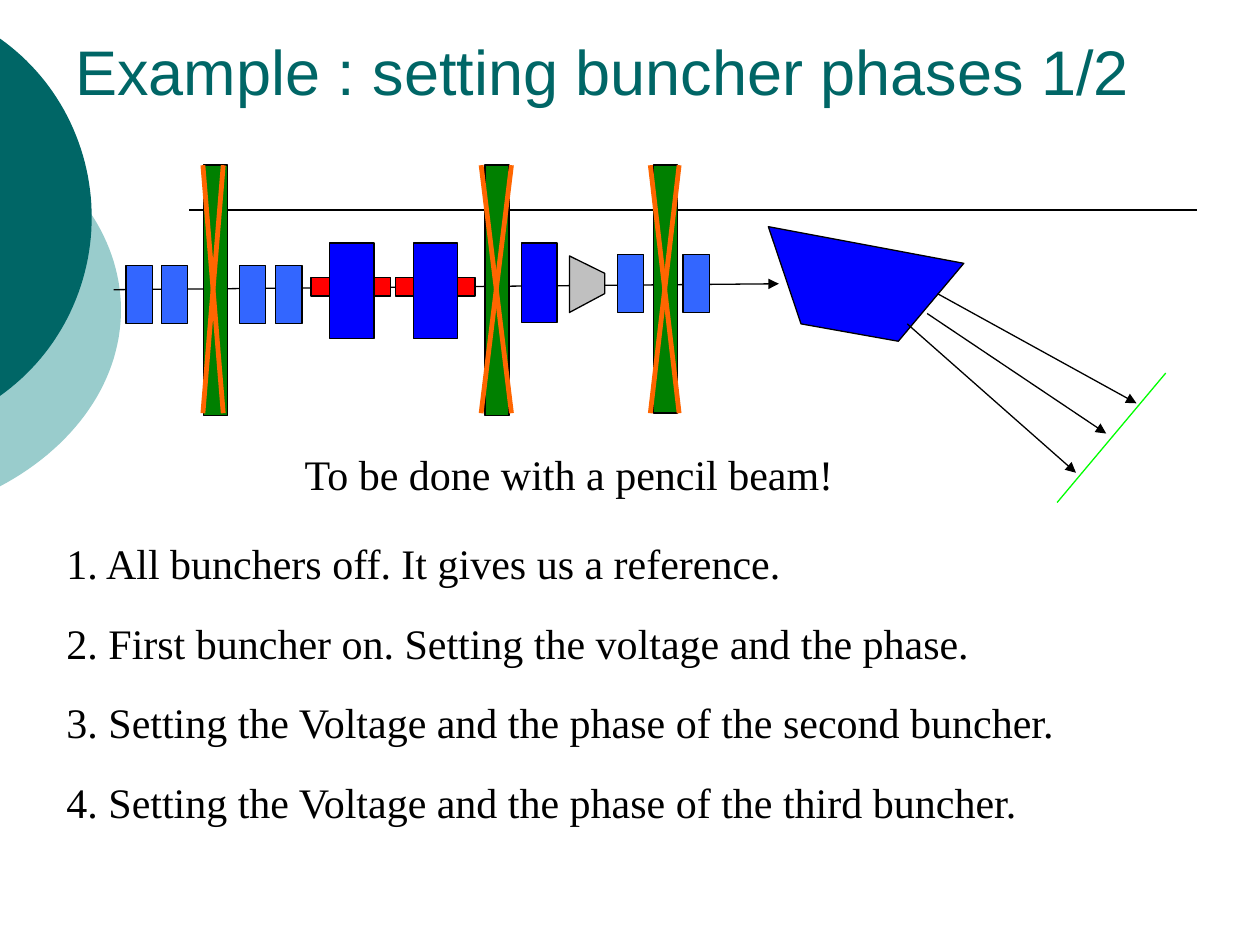
import math
from dataclasses import dataclass

import lxml.etree
import pptx
import pptx.dml.color
import pptx.enum.shapes
import pptx.enum.text
import pptx.oxml.ns
import pptx.util

Cm = pptx.util.Cm
Point = tuple[float, float]


@dataclass(frozen=True)
class Theme:
    teal: str = "006666"
    mist: str = "99CCCC"
    black: str = "000000"
    red: str = "FF0000"
    sky: str = "3366FF"
    blue: str = "0000FF"
    green: str = "008000"
    grey: str = "C0C0C0"
    lime: str = "00FF00"
    orange: str = "FF6600"
    sans: str = "Arial"
    serif: str = "Times New Roman"
    head: float = 36
    body: float = 24
    thin: float = 0.75
    rule: float = 1
    bold: float = 2.75


@dataclass(frozen=True)
class Group:
    """Equal boxes that share a top edge; lengths in cm."""
    lefts: tuple[float, ...]
    top: float
    width: float
    height: float
    color: str


@dataclass(frozen=True)
class Cross:
    """Strike-out over a buncher, in cm."""
    left: float
    right: float


T = Theme()
TOP, BASE = 3.33, 8.33

GROUPS = (
    Group((6.27, 7.98), 5.59, 1.6, 0.38, T.red),
    Group((2.54, 3.25, 4.83, 5.56), 5.36, 0.53, 1.17, T.sky),
    Group((12.45, 13.77), 5.13, 0.53, 1.17, T.sky),
    Group((4.11, 9.78), TOP, 0.48, 5.05, T.green),
    Group((13.18,), TOP, 0.48, 5, T.green),
    Group((6.65, 8.33), 4.9, 0.89, 1.93, T.blue),
    Group((10.52,), 4.9, 0.71, 1.6, T.blue),
)
CROSSES = (Cross(4.09, 4.5), Cross(13.11, 13.69), Cross(9.7, 10.31))
CONE = [(11.48, 6.3), (12.19, 5.92), (12.19, 5.51), (11.48, 5.16)]
MAGNET = [(15.49, 4.57), (16.15, 6.53), (18.11, 6.88), (19.43, 5.31)]
RAYS = (
    ((18.69, 6.32), (22.3, 8.74)),
    ((18.29, 6.53), (21.69, 9.53)),
    ((18.9, 5.92), (22.91, 8.13)),
)
STEPS = (
    "1. All bunchers off. It gives us a reference.",
    "2. First buncher on. Setting the voltage and the phase.",
    "3. Setting the Voltage and the phase of the second buncher.",
    "4. Setting the Voltage and the phase of the third buncher.",
)


def rgb(color: str) -> pptx.dml.color.RGBColor:
    return pptx.dml.color.RGBColor.from_string(color)


def paint(shape, color: str, edge: bool = True) -> None:
    shape.shadow.inherit = False
    shape.fill.solid()
    shape.fill.fore_color.rgb = rgb(color)
    if edge:
        shape.line.color.rgb = rgb(T.black)
        shape.line.width = pptx.util.Pt(T.thin)
    else:
        shape.line.fill.background()


def draw_group(slide, group: Group) -> None:
    for left in group.lefts:
        box = slide.shapes.add_shape(
            pptx.enum.shapes.MSO_SHAPE.RECTANGLE, Cm(left), Cm(group.top),
            Cm(group.width), Cm(group.height))
        paint(box, group.color)


def draw_shape(slide, points: list[Point], color: str,
               edge: bool = True) -> None:
    first, *rest = [(Cm(x), Cm(y)) for x, y in points]
    form = slide.shapes.build_freeform(*first)
    form.add_line_segments(rest, close=True)
    paint(form.convert_to_shape(), color, edge)


def draw_disc(slide, mid: Point, radii: Point, color: str) -> None:
    """Draw the part of an ellipse that lies right of the slide's left edge."""
    span, count = math.acos(-mid[0] / radii[0]), 60
    turns = [span * (2 * i / count - 1) for i in range(count + 1)]
    arc = [(max(0, mid[0] + radii[0] * math.cos(a)),
            mid[1] + radii[1] * math.sin(a)) for a in turns]
    draw_shape(slide, arc, color, edge=False)


def draw_line(slide, start: Point, end: Point, color: str = T.black,
              width: float = T.thin, arrow: bool = False) -> None:
    line = slide.shapes.add_connector(
        pptx.enum.shapes.MSO_CONNECTOR.STRAIGHT,
        *(Cm(v) for v in (*start, *end)))
    line.line.color.rgb = rgb(color)
    line.line.width = pptx.util.Pt(width)
    qn = pptx.oxml.ns.qn
    if arrow:
        lxml.etree.SubElement(line.line._get_or_add_ln(), qn("a:tailEnd"),
                              type="triangle")
    lxml.etree.SubElement(line._element.spPr, qn("a:effectLst"))


def draw_cross(slide, cross: Cross) -> None:
    for a, b in ((cross.left, cross.right), (cross.right, cross.left)):
        draw_line(slide, (a, TOP), (b, BASE), T.orange, T.bold)


def write(slide, text: str, *, left: float, top: float, width: float,
          height: float = 1.27, size: float = T.body, font: str = T.serif,
          color: str = T.black,
          anchor=pptx.enum.text.MSO_ANCHOR.TOP) -> None:
    frame = slide.shapes.add_textbox(
        Cm(left), Cm(top), Cm(width), Cm(height)).text_frame
    frame.word_wrap = True
    frame.vertical_anchor = anchor
    run = frame.paragraphs[0].add_run()
    run.text = text
    run.font.size = pptx.util.Pt(size)
    run.font.name = font
    run.font.color.rgb = rgb(color)


def main() -> None:
    deck = pptx.Presentation()
    deck.slide_width, deck.slide_height = Cm(25.4), Cm(19.05)
    slide = deck.slides.add_slide(deck.slide_layouts[6])

    draw_disc(slide, (-3.28, 6.25), (5.72, 4.34), T.mist)
    draw_disc(slide, (-2.44, 4.38), (4.29, 4.38), T.teal)
    draw_line(slide, (3.81, 4.24), (24.13, 4.24), width=T.rule)
    write(slide, "Example : setting buncher phases 1/2", left=1.27, top=0.76,
          width=22.86, height=1.55, size=T.head, font=T.sans, color=T.teal,
          anchor=pptx.enum.text.MSO_ANCHOR.BOTTOM)

    draw_line(slide, (2.29, 5.84), (15.7, 5.72), arrow=True)
    for group in GROUPS:
        draw_group(slide, group)
    draw_shape(slide, CONE, T.grey)
    draw_shape(slide, MAGNET, T.blue)
    for start, end in RAYS:
        draw_line(slide, start, end, arrow=True)
    draw_line(slide, (21.31, 10.13), (23.5, 7.52), T.lime)
    for cross in CROSSES:
        draw_cross(slide, cross)

    for i, step in enumerate(STEPS):
        write(slide, step, left=1.09, top=10.72 + 1.6 * i, width=21.21)
    write(slide, "To be done with a pencil beam!", left=5.89, top=8.92,
          width=11.61)
    deck.save("out.pptx")


if __name__ == "__main__":
    main()
